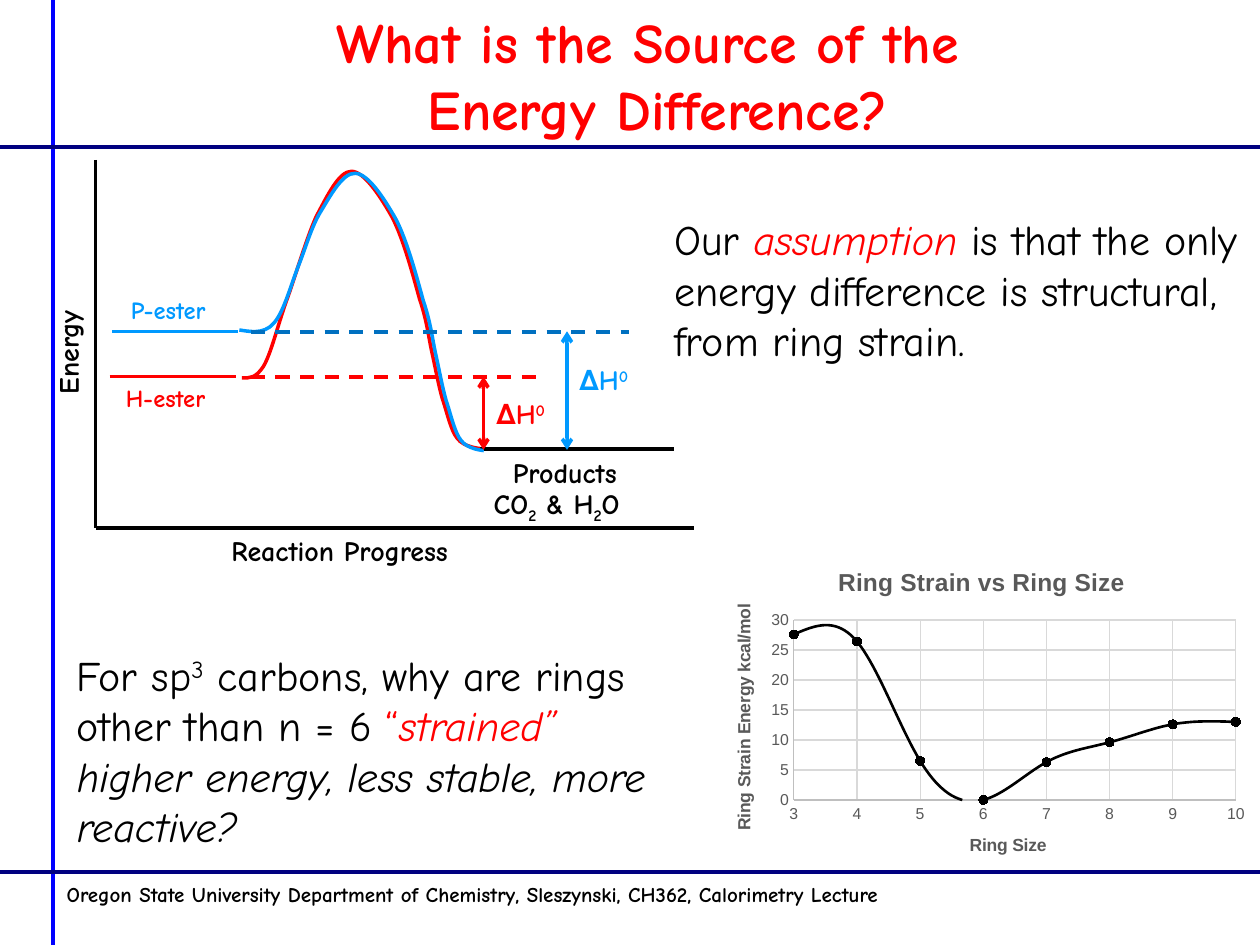
from lxml.etree import SubElement
from pptx import Presentation
from pptx.chart.data import XyChartData
from pptx.dml.color import RGBColor
from pptx.enum.chart import XL_CHART_TYPE as ChartType, XL_MARKER_STYLE as Marker, XL_TICK_MARK as Tick
from pptx.enum.dml import MSO_LINE as Dash
from pptx.enum.shapes import MSO_CONNECTOR as Connector
from pptx.enum.text import MSO_ANCHOR as Anchor, MSO_AUTO_SIZE as AutoSize, PP_ALIGN as Align
from pptx.oxml.ns import qn
from pptx.util import Pt

FONT = "Comic Neue"
BLACK, RED, BLUE, GRAY = "000000", "FF0000", "0099FF", "595959"

# Energy curves as Bezier points, measured from the top of the energy axis
H_RISE = [(83.5, 124.6), (88.6, 124.6), (91.4, 124.6), (95.8, 118.1), (100.1, 110.9),
          (103.7, 95.8), (108.7, 81.4), (113.8, 67.7), (120.2, 45.4), (126, 32.4),
          (132.5, 20.2), (139, 6.5), (146.2, 6.5)]
P_RISE = [(82.1, 97.2), (87.1, 97.9), (95.8, 100.1), (101.5, 93.6), (107.3, 87.8),
          (111.6, 71.3), (115.9, 60.5), (120.2, 49.7), (123.1, 38.9), (128.2, 30.2),
          (133.9, 20.9), (141.1, 7.2), (148.3, 7.7)]
DESCENT = [(153.4, 6.5), (162.7, 20.9), (169.2, 32.4), (175.7, 44.6), (181.4, 66.2),
           (185, 79.2), (189.4, 92.2), (190.1, 100.8), (192.2, 110.2), (194.4, 120.2),
           (195.8, 128.2), (198, 136.1), (200.9, 144.7), (203, 154.8), (206.6, 159.1),
           (210.2, 164.2), (219.6, 164.9), (219.6, 164.9)]


def rgb(color):
    return RGBColor.from_string(color)


def style_font(font, size, color, bold=False, italic=False, name=FONT):
    font.name, font.size, font.bold, font.italic = name, Pt(size), bold, italic
    font.color.rgb = rgb(color)


def write(frame, paragraphs, align=Align.LEFT, **style):
    """Each paragraph is a list of (text, changes to the style)."""
    for number, spans in enumerate(paragraphs):
        para = frame.add_paragraph() if number else frame.paragraphs[0]
        para.alignment = align
        para.space_before = Pt(0)
        for text, changes in spans:
            span = para.add_run()
            span.text = text
            look = {**style, **changes}
            baseline = look.pop("baseline", 0)
            style_font(span.font, **look)
            if baseline:
                span._r.get_or_add_rPr().set("baseline", str(baseline * 1000))


def add_text(shapes, box, spans, wrap=True, **style):
    shape = shapes.add_textbox(*map(Pt, box))
    shape.text_frame.word_wrap = wrap
    write(shape.text_frame, [spans], **style)
    return shape


def add_line(shapes, x1, y1, x2, y2, color, width=2, dash=None, arrows=False):
    line = shapes.add_connector(Connector.STRAIGHT, Pt(x1), Pt(y1), Pt(x2), Pt(y2))
    line.line.color.rgb = rgb(color)
    line.line.width = Pt(width)
    if dash:
        line.line.dash_style = dash
    if arrows:
        for end in ("a:headEnd", "a:tailEnd"):
            SubElement(line.line._get_or_add_ln(), qn(end), type="arrow")
    SubElement(line._element.spPr, qn("a:effectLst"))


def fill_placeholder(shape, box, paragraphs, anchor=Anchor.TOP, **style):
    shape.left, shape.top, shape.width, shape.height = map(Pt, box)
    frame = shape.text_frame
    frame.auto_size, frame.vertical_anchor = AutoSize.NONE, anchor
    write(frame, paragraphs, **style)
    for para in frame.paragraphs:
        props = para._p.get_or_add_pPr()
        props.set("marL", "0")
        props.set("indent", "0")
        SubElement(props, qn("a:buNone"))


def add_frame(page, width, height):
    """Ruled lines and footer."""
    add_line(page.shapes, 30.2, 0, 30.2, height, "0000FF", 2.25)
    for y in (84.2, 498.2):
        add_line(page.shapes, 0, y, width, y, "000080", 2.25)
    footer = "Oregon State University Department of Chemistry, Sleszynski, CH362, Calorimetry Lecture"
    add_text(page.shapes, (31, 500, 572, 24), [(footer, {})], size=12, color=BLACK, bold=True)


def bend(shape):
    """Turn each three straight segments into one cubic Bezier segment."""
    path = next(shape._element.iter(qn("a:path")))
    segments = path.findall(qn("a:lnTo"))
    for i in range(0, len(segments), 3):
        cubic = SubElement(path, qn("a:cubicBezTo"))
        for segment in segments[i:i + 3]:
            cubic.append(segment[0])
            path.remove(segment)


def add_energy_diagram(page, left, top, width, height):
    shapes = page.shapes.add_group_shape().shapes
    h_level, p_level, product_level = 123.8, 97.9, 165.1

    def label(x, y, w, spans, size=16, color=BLACK, wrap=True):
        return add_text(shapes, (left + x, top + y, w, 26.6), spans, wrap, size=size, color=color, bold=True)

    def line(x1, y1, x2, y2, color, **options):
        add_line(shapes, left + x1, top + y1, left + x2, top + y2, color, **options)

    def curve(points, color):
        emu = [(Pt(left + x), Pt(top + y)) for x, y in points]
        builder = shapes.build_freeform(*emu[0])
        builder.add_line_segments(emu[1:], close=False)
        shape = builder.convert_to_shape()
        bend(shape)
        shape.fill.background()
        shape.line.color.rgb = rgb(color)
        shape.line.width = Pt(2)
        shape.shadow.inherit = False

    # Axes and products
    line(0, 0, 0, height, BLACK)
    line(0, height, width, height, BLACK)
    label(-56.1, 87.4, 80.6, [("Energy", {})]).rotation = 270
    label(70.4, height - 0.3, 186, [("Reaction Progress", {})])
    label(231.3, 165.2, 82, [("Products", {})])
    low = {"baseline": -25}
    label(220.3, 182.9, 101, [("CO", {}), ("2", low), (" & H", {}), ("2", low), ("O", {})], wrap=False)
    line(218.2, product_level, 330.5, product_level, BLACK)

    # Reaction paths; the P-ester descent runs just beside the other
    curve(H_RISE + DESCENT, RED)
    curve(P_RISE + [(x + 2.2, y + 1.2) for x, y in DESCENT], BLUE)

    # Levels and enthalpy differences
    esters = [
        ("H-ester", RED, RED, h_level, 7.9, (10.1, 123.9), 252.7, 221.6, (221.8, 131.8)),
        ("P-ester", BLUE, "0070C0", p_level, 9.4, (13, 73.4), 304.6, 269.3, (269.3, 112.3)),
    ]
    for name, color, dash_color, level, start, name_at, dash_end, arrow_x, delta_at in esters:
        label(*name_at, 100.8, [(name, {})], 14, color)
        line(start, level, start + 72, level, color)
        line(88.6, level + 0.3, dash_end, level + 0.3, dash_color, dash=Dash.DASH)
        line(arrow_x, level, arrow_x, product_level + 0.6, color, arrows=True)
        label(*delta_at, 51, [("∆H", {}), ("0", {"baseline": 30})], color=color)


def set_layout(parent, index, chart_size, **lengths):
    """Place a chart part by hand; lengths become fractions of the chart's size."""
    for old in parent.findall(qn("c:layout")):
        parent.remove(old)
    layout = SubElement(parent, qn("c:layout"))
    parent.insert(index, layout)
    manual = SubElement(layout, qn("c:manualLayout"))
    if "w" in lengths:
        SubElement(manual, qn("c:layoutTarget"), val="inner")
    for key in ("x", "y"):
        SubElement(manual, qn(f"c:{key}Mode"), val="edge")
    for key, length in lengths.items():
        whole = chart_size[0] if key in "xw" else chart_size[1]
        SubElement(manual, qn(f"c:{key}"), val=str(length / whole))


def add_title(owner, text, size, chart_size, x, y):
    owner.has_title = True
    title = owner.chart_title if hasattr(owner, "chart_title") else owner.axis_title
    write(title.text_frame, [[(text, {})]], Align.CENTER, size=size, color=GRAY, bold=True, name="Arial")
    set_layout(title._element, 1, chart_size, x=x, y=y)


def add_strain_chart(page, box):
    data = XyChartData()
    series = data.add_series("Series 1")
    for size, energy in enumerate([27.6, 26.4, 6.5, 0, 6.3, 9.6, 12.6, 13], start=3):
        series.add_data_point(size, energy)
    chart = page.shapes.add_chart(ChartType.XY_SCATTER_SMOOTH, *map(Pt, box), data).chart
    chart_size = box[2:]
    chart.has_legend = False
    style_font(chart.font, 10, BLACK, name="Arial")
    add_title(chart, "Ring Strain vs Ring Size", 14, chart_size, 71.8, 7.4)

    # Axes
    ring_axis, energy_axis = chart.category_axis, chart.value_axis
    ring_axis.minimum_scale, ring_axis.maximum_scale = 3, 10
    for axis, text, x, y in ((ring_axis, "Ring Size", 147.7, 160.6),
                             (energy_axis, "Ring Strain Energy kcal/mol", 12.2, 29.4)):
        add_title(axis, text, 10, chart_size, x, y)
        axis.major_tick_mark = axis.minor_tick_mark = Tick.NONE
        axis.has_major_gridlines = True
        style_font(axis.tick_labels.font, 9, GRAY, name="Arial")
        for line, color in ((axis.format.line, "BFBFBF"), (axis.major_gridlines.format.line, "D9D9D9")):
            line.color.rgb = rgb(color)
            line.width = Pt(0.75)

    # Curve and markers
    plot = chart.plots[0]
    plot.vary_by_categories = False
    strain = plot.series[0]
    strain._element.get_or_add_smooth().val = True
    strain.format.line.color.rgb = rgb(BLACK)
    strain.format.line.width = Pt(1.5)
    strain.marker.style, strain.marker.size = Marker.CIRCLE, 5
    strain.marker.format.fill.solid()
    strain.marker.format.fill.fore_color.rgb = rgb(BLACK)
    strain.marker.format.line.color.rgb = rgb(BLACK)
    set_layout(chart._chartSpace.chart.plotArea, 0, chart_size, x=49.1, y=40.4, w=252.6, h=102.9)


def main():
    deck = Presentation()
    deck.slide_width, deck.slide_height = Pt(720), Pt(540)
    page = deck.slides.add_slide(deck.slide_layouts.get_by_name("Two Content"))
    title, assumption, question = page.placeholders
    add_frame(page, 720, 540)

    # Title and text
    fill_placeholder(title, (31.3, 0.3, 689.4, 85), [[("What is the Source of the ", {})], [("Energy Difference?", {})]],
                     Anchor.MIDDLE, align=Align.CENTER, size=32, color=RED, bold=True)
    fill_placeholder(assumption, (378, 118.6, 342, 94.3), [[
        ("Our ", {}), ("assumption", {"color": RED, "italic": True}),
        (" is that the only energy difference is structural, from ring strain.", {})]], size=24, color=BLACK)
    fill_placeholder(question, (36.7, 367.4, 379.4, 123.8), [
        [("For sp", {}), ("3", {"baseline": 30}), (" carbons, why are rings other than n = 6 ", {}),
         ("“", {"color": RED}), ("strained”", {"color": RED, "italic": True})],
        [("higher energy, less stable, more reactive?", {"italic": True})]], size=24, color=BLACK)

    add_energy_diagram(page, 54.7, 91.4, 342, 210.3)
    add_strain_chart(page, (404.6, 313.9, 312.5, 190.1))
    deck.save("out.pptx")


if __name__ == "__main__":
    main()
